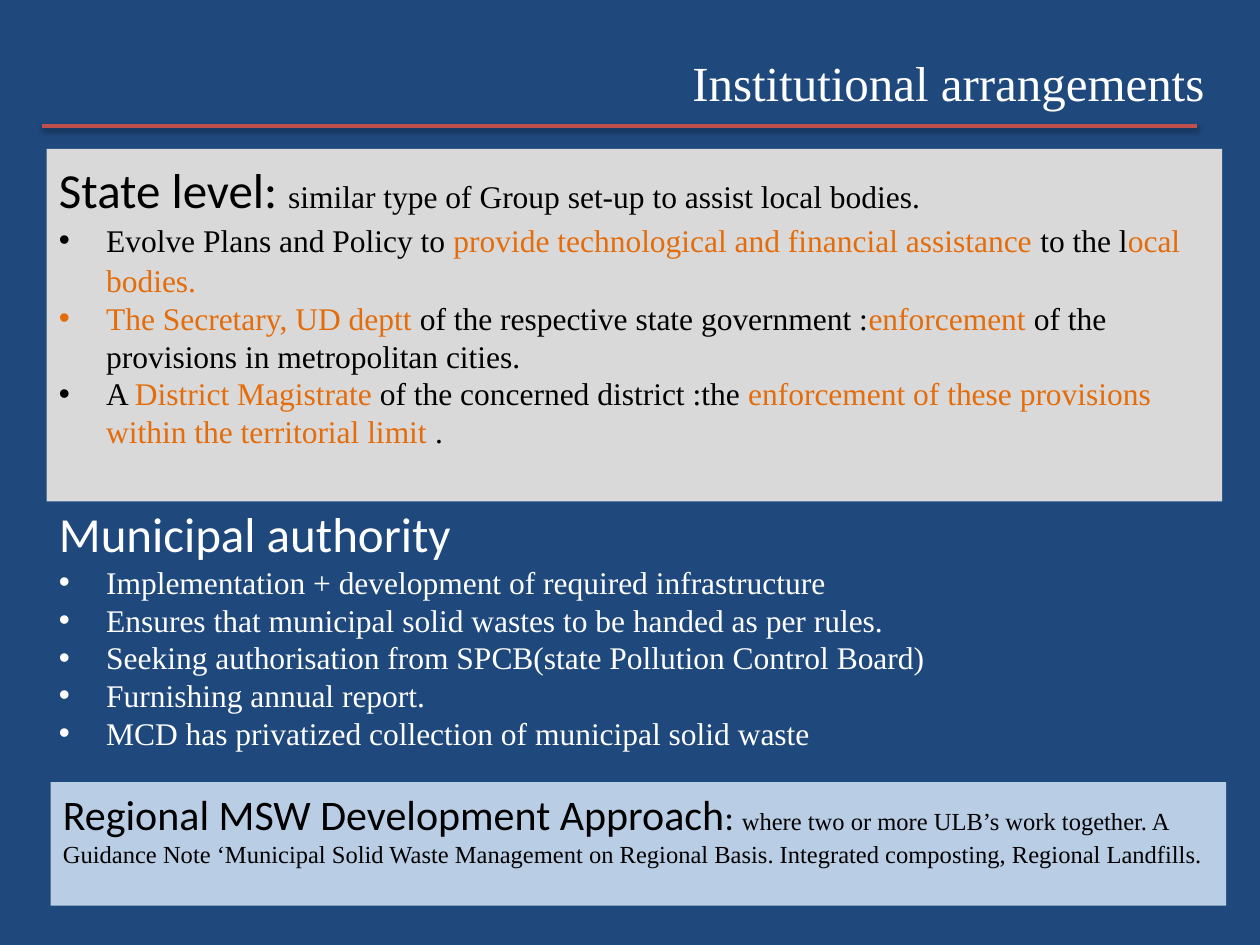
from lxml import etree
from pptx import Presentation
from pptx.dml.color import RGBColor
from pptx.enum.shapes import MSO_CONNECTOR, MSO_SHAPE
from pptx.enum.text import MSO_ANCHOR, PP_ALIGN
from pptx.oxml import parse_xml
from pptx.oxml.ns import nsdecls, qn
from pptx.util import Cm, Pt

RECTANGLE = MSO_SHAPE.RECTANGLE
STRAIGHT = MSO_CONNECTOR.STRAIGHT
TOP = MSO_ANCHOR.TOP
LEFT, CENTER = PP_ALIGN.LEFT, PP_ALIGN.CENTER

NAVY, RED, ORANGE = "1F497D", "C0504D", "E46C0A"
GREY, PALE_BLUE = "D9D9D9", "B9CDE5"
BLACK, WHITE = "000000", "FFFFFF"
SANS, SERIF = "Calibri", "Times New Roman"
BULLET_INDENT = Cm(0.95)


def color(hex_string):
    return RGBColor.from_string(hex_string)


def write_paragraph(paragraph, runs, bullet=False, spacing=None):
    """Fill a paragraph with runs given as (text, font, size, colour)."""
    paragraph.alignment = LEFT
    if spacing:
        paragraph.line_spacing = spacing
    if bullet:
        properties = paragraph._p.get_or_add_pPr()
        properties.set("marL", str(BULLET_INDENT))
        properties.set("indent", str(-BULLET_INDENT))
        etree.SubElement(properties, qn("a:buFont")).set("typeface", "Arial")
        etree.SubElement(properties, qn("a:buChar")).set("char", "•")
    for text, font, size, hex_string in runs:
        run = paragraph.add_run()
        run.text = text
        run.font.name = font
        run.font.size = Pt(size)
        run.font.color.rgb = color(hex_string)


presentation = Presentation()
presentation.slide_width, presentation.slide_height = Cm(25.4), Cm(19.05)
slide = presentation.slides.add_slide(presentation.slide_layouts[6])
slide.background.fill.solid()
slide.background.fill.fore_color.rgb = color(NAVY)

# Panels
panels = []
for left, top, height, fill in ((0.94, 3, 7.11, GREY), (1.02, 15.77, 2.49, PALE_BLUE)):
    panel = slide.shapes.add_shape(RECTANGLE, Cm(left), Cm(top), Cm(23.7), Cm(height))
    panel.shadow.inherit = False
    panel.fill.solid()
    panel.fill.fore_color.rgb = color(fill)
    panel.line.fill.background()
    panel.text_frame.word_wrap = True
    panel.text_frame.vertical_anchor = TOP
    panels.append(panel)
state_panel, regional_panel = panels

# Title and rule
title = slide.shapes.add_textbox(Cm(7.37), Cm(0.94), Cm(23.5), Cm(1.45))
title.text_frame.word_wrap = True
title_paragraph = title.text_frame.paragraphs[0]
write_paragraph(title_paragraph, [("Institutional arrangements", SERIF, 28, WHITE)])
title_paragraph.alignment = CENTER

rule = slide.shapes.add_connector(STRAIGHT, Cm(0.84), Cm(2.54), Cm(24.13), Cm(2.54))
rule.line.color.rgb = color(RED)
rule.line.width = Pt(2)
rule._element.spPr.append(parse_xml(
    f'<a:effectLst {nsdecls("a")}>'
    f'<a:outerShdw blurRad="{Pt(3.1)}" dist="{Pt(1.6)}" dir="5400000" rotWithShape="0">'
    '<a:srgbClr val="000000"><a:alpha val="38000"/></a:srgbClr>'
    '</a:outerShdw></a:effectLst>'))

# State level
state_frame = state_panel.text_frame
write_paragraph(state_frame.paragraphs[0], [
    ("State level: ", SANS, 28, BLACK),
    ("similar type of Group set-up to assist local bodies.", SERIF, 18, BLACK),
], spacing=1.07)
state_bullets = [
    (1.07, [("Evolve Plans and Policy to ", BLACK),
            ("provide technological and financial assistance ", ORANGE),
            ("to the l", BLACK),
            ("ocal bodies.", ORANGE)]),
    (None, [("The Secretary, UD deptt ", ORANGE),
            ("of the respective state government :", BLACK),
            ("enforcement", ORANGE),
            (" of the provisions in metropolitan cities.", BLACK)]),
    (None, [("A ", BLACK),
            ("District Magistrate", ORANGE),
            (" of the concerned district :the ", BLACK),
            ("enforcement of these provisions within the territorial limit", ORANGE),
            (" .", BLACK)]),
]
for spacing, parts in state_bullets:
    runs = [(text, SERIF, 18, hex_string) for text, hex_string in parts]
    write_paragraph(state_frame.add_paragraph(), runs, bullet=True, spacing=spacing)

# Municipal authority
municipal = slide.shapes.add_textbox(Cm(0.94), Cm(9.3), Cm(24.77), Cm(6.83))
municipal_frame = municipal.text_frame
municipal_frame.word_wrap = True
municipal_frame.margin_top = Cm(0.86)
write_paragraph(municipal_frame.paragraphs[0], [("Municipal authority", SANS, 28, WHITE)])
for duty in (
    "Implementation + development of required infrastructure",
    "Ensures that municipal solid wastes to be handed as per rules.",
    "Seeking authorisation from SPCB(state Pollution Control Board)",
    "Furnishing annual report.",
    "MCD has privatized collection of municipal solid waste",
):
    write_paragraph(municipal_frame.add_paragraph(), [(duty, SERIF, 18, WHITE)], bullet=True)

# Regional approach
write_paragraph(regional_panel.text_frame.paragraphs[0], [
    ("Regional MSW Development Approach", SANS, 24, BLACK),
    (": ", SANS, 20, BLACK),
    ("where two or more ULB’s work together. A Guidance Note ‘Municipal Solid Waste "
     "Management on Regional Basis. Integrated composting, Regional Landfills.",
     SERIF, 14, BLACK),
])

presentation.save("out.pptx")
